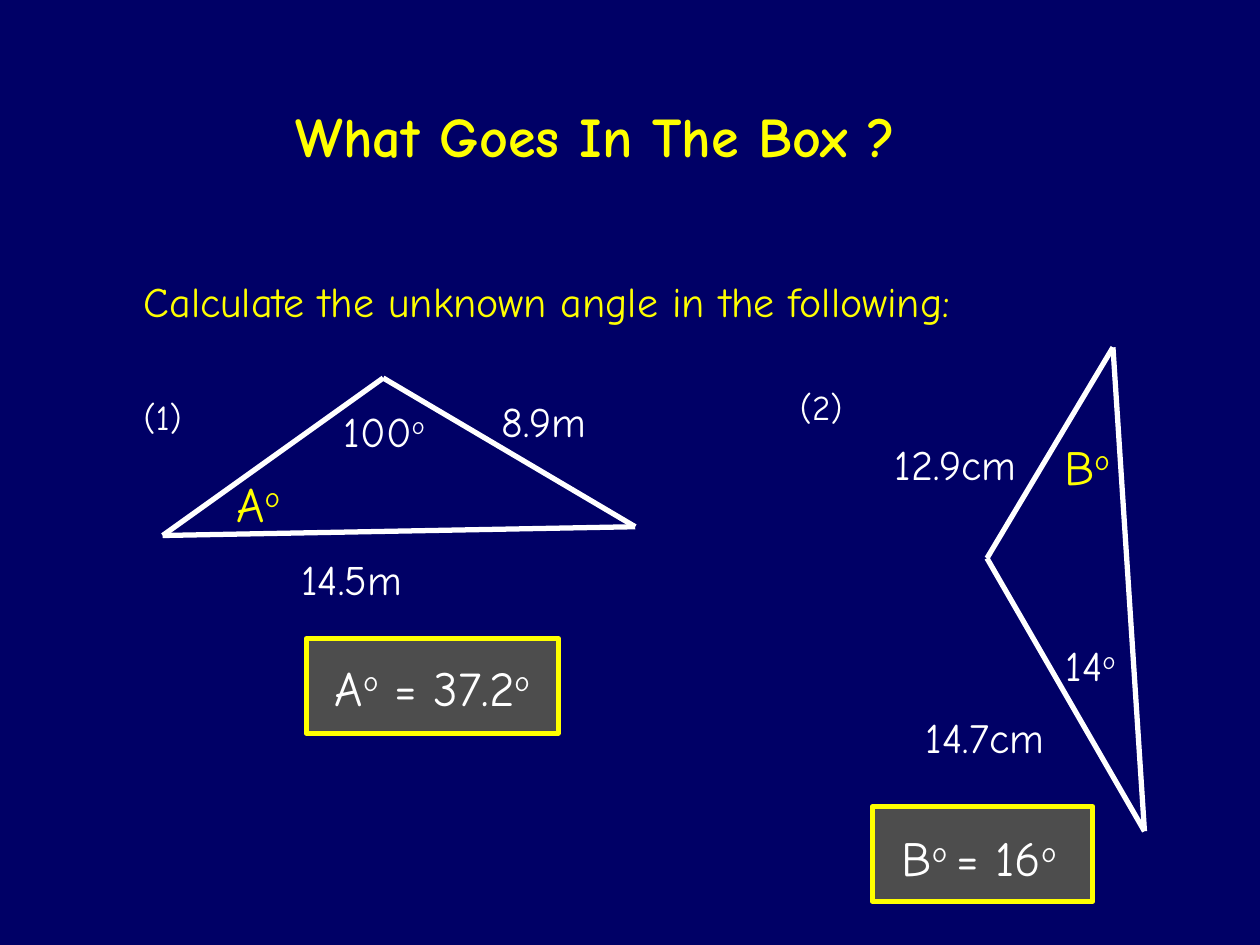
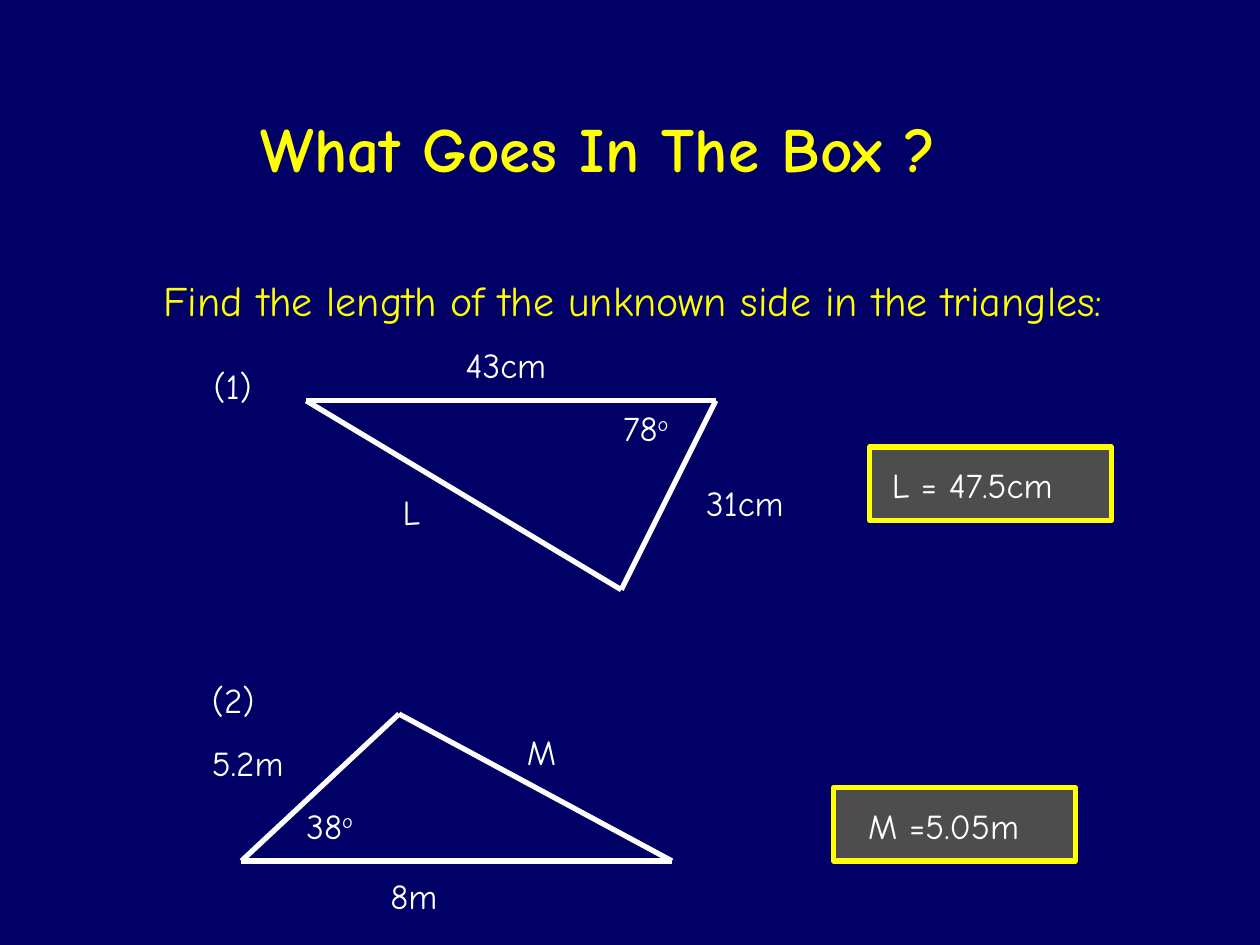
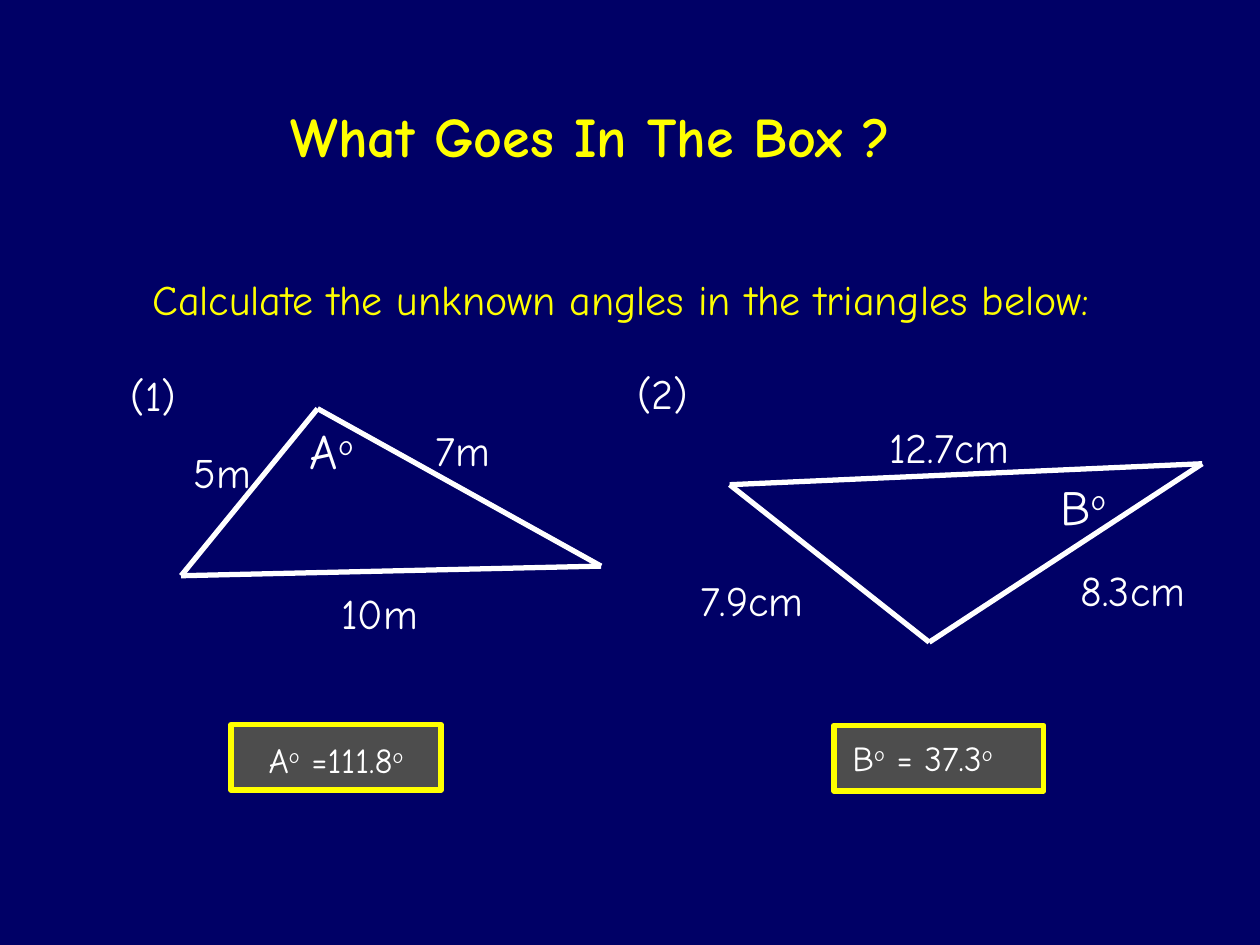
from dataclasses import dataclass
from itertools import combinations

from lxml import etree
from pptx import Presentation
from pptx.dml.color import RGBColor
from pptx.enum.shapes import MSO_CONNECTOR, MSO_SHAPE
from pptx.enum.text import MSO_ANCHOR, PP_ALIGN
from pptx.oxml.ns import qn
from pptx.util import Pt

RECTANGLE = MSO_SHAPE.RECTANGLE
STRAIGHT = MSO_CONNECTOR.STRAIGHT
TOP, MIDDLE = MSO_ANCHOR.TOP, MSO_ANCHOR.MIDDLE
LEFT, CENTER = PP_ALIGN.LEFT, PP_ALIGN.CENTER


@dataclass(frozen=True)
class Theme:
    background: RGBColor = RGBColor(0x00, 0x00, 0x66)
    yellow: RGBColor = RGBColor(0xFF, 0xFF, 0x00)
    white: RGBColor = RGBColor(0xFF, 0xFF, 0xFF)
    panel: RGBColor = RGBColor(0x4D, 0x4D, 0x4D)
    font: str = "Comic Neue"
    small: int = 20
    medium: int = 24
    large: int = 28
    title: int = 32
    big_title: int = 36
    stroke: int = 3


THEME = Theme()
SMALL, MEDIUM, LARGE = THEME.small, THEME.medium, THEME.large
YELLOW, WHITE = THEME.yellow, THEME.white
LINE_HEIGHTS = {SMALL: 36, MEDIUM: 36, LARGE: 41}
TITLE = "What Goes In The Box ?"

# Text in braces is raised.
# Labels: text, left, top, width, size, colour.
# Answers: panel (left, top, width, height), text, text (left, top, width), size, alignment.
SLIDES = [
    {
        "title": (162, 44, 418, 66, THEME.title),
        "question": ("Calculate the unknown angle in the following:", 75, 154, 531),
        "triangles": [
            [(219, 216), (93, 306), (363, 301)],
            [(636, 198.5), (564, 319), (654, 475)],
        ],
        "labels": [
            ("(1)", 75, 222.5, 54, SMALL, WHITE),
            ("14.5m", 165, 312.5, 96, MEDIUM, WHITE),
            ("8.9m", 279.5, 222.5, 78.5, MEDIUM, WHITE),
            ("A{o}", 128, 267, 56, LARGE, YELLOW),
            ("100{o}", 189.5, 228, 72, MEDIUM, WHITE),
            ("(2)", 450, 216.5, 54, SMALL, WHITE),
            ("14.7cm", 522, 403, 96, MEDIUM, WHITE),
            ("B{o}", 601, 246, 48, LARGE, YELLOW),
            ("14{o}", 602, 362, 54, MEDIUM, WHITE),
            ("12.9cm", 504, 247, 96, MEDIUM, WHITE),
        ],
        "answers": [
            ((175, 365, 144, 54), "A{o} = 37.2{o}", (162, 372, 170), LARGE, CENTER),
            ((498.5, 461, 126, 54), "B{o }= 16{o}", (502.5, 469.5, 114), LARGE, CENTER),
        ],
    },
    {
        "title": (142, 60, 459, 48, THEME.big_title),
        "question": ("Find the length of the unknown side in the triangles:", 86.5, 153.5, 633.5),
        "triangles": [
            [(175, 229), (409, 229), (355, 337)],
            [(138, 492), (384, 492), (228, 408)],
        ],
        "labels": [
            ("(1)", 115, 205, 54, SMALL, WHITE),
            ("78{o}", 349, 229, 54, SMALL, WHITE),
            ("43cm", 259, 193, 78, SMALL, WHITE),
            ("31cm", 396.5, 271.5, 72, SMALL, WHITE),
            ("L", 223, 277, 72, SMALL, WHITE),
            ("(2)", 114, 384, 54, SMALL, WHITE),
            ("8m", 216, 496, 78, SMALL, WHITE),
            ("5.2m", 114, 420, 72, SMALL, WHITE),
            ("38{o}", 168, 456, 54, SMALL, WHITE),
            ("M", 294, 414, 66, SMALL, WHITE),
        ],
        "answers": [
            ((497, 255.5, 138, 42), "L = 47.5cm", (502.5, 261.5, 126), SMALL, LEFT),
            ((476.5, 450, 138, 42), "M =5.05m", (489, 456, 120), SMALL, LEFT),
        ],
    },
    {
        "title": (159, 59, 466, 36, THEME.title),
        "question": ("Calculate the unknown angles in the triangles below:", 80, 152.5, 595),
        "triangles": [
            [(103.5, 329), (181.5, 233.5), (343.5, 323.5)],
            [(417, 277), (531, 367), (687, 265)],
        ],
        "labels": [
            ("(1)", 67.5, 207.5, 48, MEDIUM, WHITE),
            ("10m", 188, 332, 66, MEDIUM, WHITE),
            ("7m", 242, 239, 66, MEDIUM, WHITE),
            ("5m", 103.5, 251.5, 60, MEDIUM, WHITE),
            ("A{o}", 170, 237, 48, LARGE, WHITE),
            ("B{o}", 599, 268.5, 49, LARGE, WHITE),
            ("(2)", 357, 206.5, 48, MEDIUM, WHITE),
            ("12.7cm", 501, 237.5, 101.5, MEDIUM, WHITE),
            ("7.9cm", 393, 325, 86, MEDIUM, WHITE),
            ("8.3cm", 610.5, 319, 88.5, MEDIUM, WHITE),
        ],
        "answers": [
            ((132, 414, 120, 37.5), "A{o} =111.8{o}", (132, 418.5, 120), SMALL, CENTER),
            ((476.5, 414.5, 120, 37.5), "B{o} = 37.3{o}", (480, 417.5, 114), SMALL, LEFT),
        ],
    },
]


def add_text(page, text, left, top, width, size, color,
             height=None, bold=False, align=LEFT, anchor=TOP):
    """Add one line of text; parts in braces become superscript."""
    height = height or LINE_HEIGHTS[size]
    box = page.shapes.add_textbox(Pt(left), Pt(top), Pt(width), Pt(height))
    frame = box.text_frame
    frame.word_wrap = True
    frame.vertical_anchor = anchor
    para = frame.paragraphs[0]
    para.alignment = align
    for index, part in enumerate(text.replace("}", "{").split("{")):
        if not part:
            continue
        span = para.add_run()
        span.text = part
        span.font.name = THEME.font
        span.font.size = Pt(size)
        span.font.bold = bold
        span.font.color.rgb = color
        if index % 2:
            span.font._element.set("baseline", "30000")


def add_triangle(page, corners):
    for start, end in combinations(corners, 2):
        side = page.shapes.add_connector(STRAIGHT, *map(Pt, start + end))
        side.line.color.rgb = WHITE
        side.line.width = Pt(THEME.stroke)
        etree.SubElement(side._element.spPr, qn("a:effectLst"))


def add_answer(page, panel_place, text, text_place, size, align):
    panel = page.shapes.add_shape(RECTANGLE, *map(Pt, panel_place))
    panel.shadow.inherit = False
    panel.fill.solid()
    panel.fill.fore_color.rgb = THEME.panel
    panel.line.color.rgb = YELLOW
    panel.line.width = Pt(THEME.stroke)
    add_text(page, text, *text_place, size, WHITE, align=align)


def add_page(deck, content):
    page = deck.slides.add_slide(deck.slide_layouts[6])
    page.background.fill.solid()
    page.background.fill.fore_color.rgb = THEME.background
    left, top, width, height, size = content["title"]
    add_text(page, TITLE, left, top, width, size, YELLOW,
             height=height, bold=True, anchor=MIDDLE)
    add_text(page, *content["question"], MEDIUM, YELLOW)
    for corners in content["triangles"]:
        add_triangle(page, corners)
    for label in content["labels"]:
        add_text(page, *label)
    for answer in content["answers"]:
        add_answer(page, *answer)


def main():
    deck = Presentation()
    deck.slide_width, deck.slide_height = Pt(720), Pt(540)
    for content in SLIDES:
        add_page(deck, content)
    deck.save("out.pptx")


if __name__ == "__main__":
    main()
